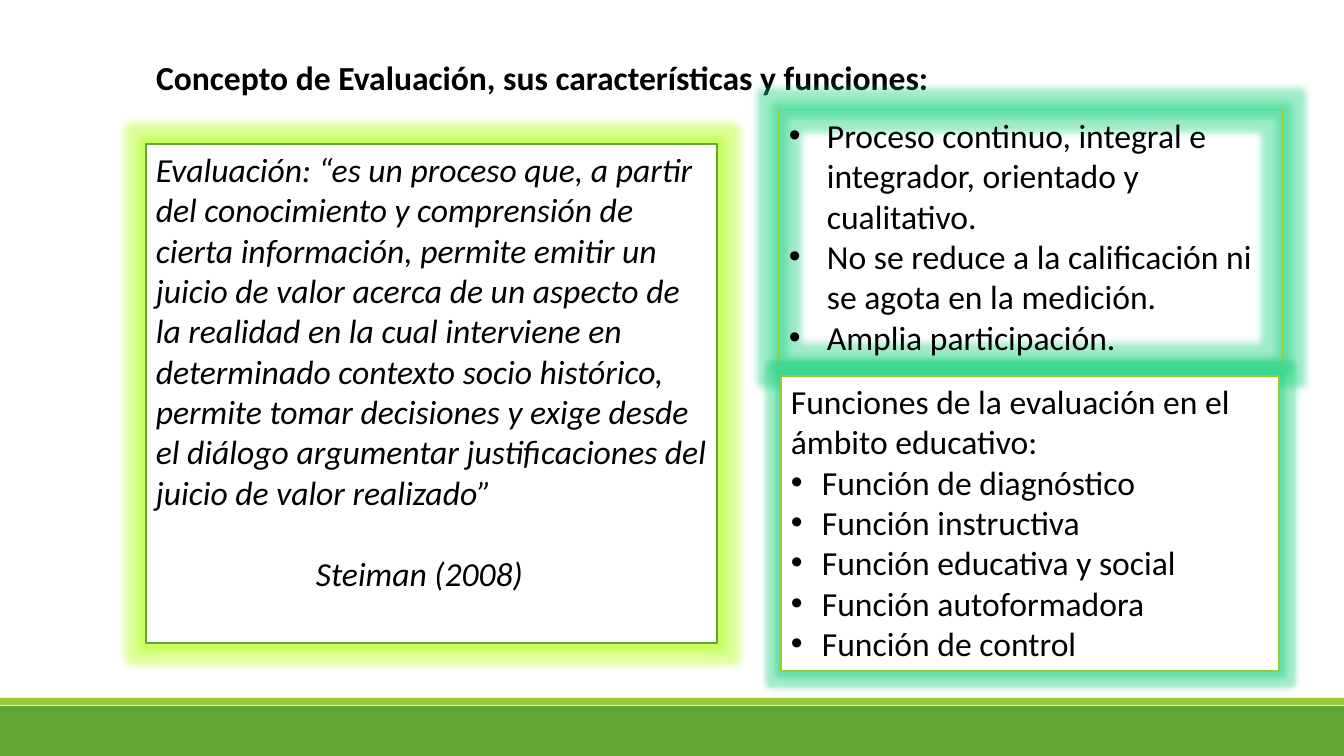
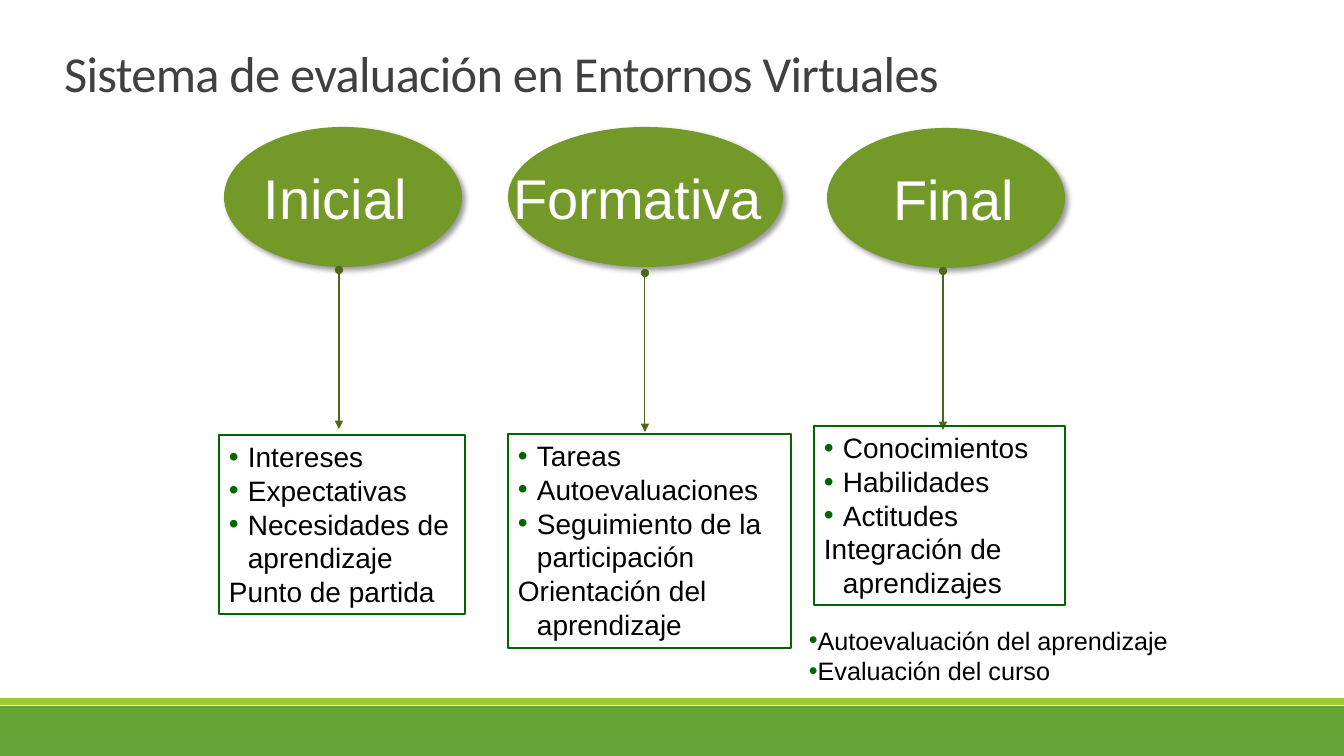
"""Build two slides on evaluation: its concept and its use in virtual settings."""
from collections import namedtuple

from lxml.etree import SubElement
from pptx import Presentation
from pptx.dml.color import RGBColor
from pptx.enum.shapes import MSO_CONNECTOR as Link, MSO_SHAPE as Preset
from pptx.enum.text import MSO_ANCHOR as Anchor, MSO_AUTO_SIZE as AutoSize, PP_ALIGN as Align
from pptx.oxml.ns import qn
from pptx.util import Pt

WIDTH, HEIGHT = 1344, 756
EMU_PER_PX = 12192000 / WIDTH

WHITE = RGBColor(0xFF, 0xFF, 0xFF)
BLACK = RGBColor(0x00, 0x00, 0x00)
CHARCOAL = RGBColor(0x40, 0x40, 0x40)
GREEN = RGBColor(0x63, 0xA5, 0x37)
LIME = RGBColor(0x99, 0xCB, 0x38)
OLIVE = RGBColor(0x73, 0x9A, 0x28)
DARK_OLIVE = RGBColor(0x4D, 0x67, 0x1B)
FOREST = RGBColor(0x00, 0x66, 0x00)
LIME_GLOW = RGBColor(0xA9, 0xFF, 0x04)
MINT_GLOW = RGBColor(0x0D, 0xD0, 0x77)

Style = namedtuple("Style", "font size color bold italic", defaults=(False, False))
CONCEPT_TITLE = Style("Calibri", 24, BLACK, bold=True)
SYSTEM_TITLE = Style("Calibri", 36, CHARCOAL)
QUOTE = Style("Calibri", 24, BLACK, italic=True)
BODY = Style("Calibri", 24, BLACK)
STAGE = Style("Arial", 40, WHITE)
DETAIL = Style("Arial", 20, BLACK)
REMARK = Style("Arial", 18, BLACK)

DEFINITION = (
    "Evaluación: “es un proceso que, a partir del conocimiento y comprensión de cierta "
    "información, permite emitir un juicio de valor acerca de un aspecto de la realidad en la "
    "cual interviene en determinado contexto socio histórico, permite tomar decisiones y exige "
    "desde el diálogo argumentar justificaciones del juicio de valor realizado”"
)
FEATURES = [
    "Proceso continuo, integral e integrador, orientado y cualitativo.",
    "No se reduce a la calificación ni se agota en la medición.",
    "Amplia participación.",
]
FUNCTIONS = [
    "Función de diagnóstico",
    "Función instructiva",
    "Función educativa y social",
    "Función autoformadora",
    "Función de control",
]
STAGES = [
    ("Inicial ", (224, 127, 238, 140), (339, 270), (219, 435, 246, 179),
     ["Intereses", "Expectativas", "Necesidades de aprendizaje"], "Punto de partida"),
    ("Formativa ", (508, 127, 275, 140), (645, 273), (508, 434, 283, 214),
     ["Tareas", "Autoevaluaciones", "Seguimiento de la participación"],
     "Orientación del aprendizaje"),
    (" Final", (827, 128, 238, 140), (943, 271), (814, 426, 251, 179),
     ["Conocimientos", "Habilidades", "Actitudes"], "Integración de aprendizajes"),
]
ARROW_LENGTH = 159
REMARKS = ["Autoevaluación del aprendizaje", "Evaluación del curso"]


def px(length):
    return round(length * EMU_PER_PX)


def add_child(parent, tag, **attributes):
    return SubElement(parent, qn(tag), {key: str(value) for key, value in attributes.items()})


def add_panel(slide, area, fill=None, line=None, line_width=1, preset=Preset.RECTANGLE):
    panel = slide.shapes.add_shape(preset, *map(px, area))
    panel.shadow.inherit = False
    if fill is None:
        panel.fill.background()
    else:
        panel.fill.solid()
        panel.fill.fore_color.rgb = fill
    if line is None:
        panel.line.fill.background()
    else:
        panel.line.color.rgb = line
        panel.line.width = Pt(line_width)
    panel.text_frame.vertical_anchor = Anchor.TOP
    panel.text_frame.word_wrap = True
    return panel


def add_effect(shape, tag, color, **attributes):
    effects = shape.element.spPr.find(qn("a:effectLst"))
    effect = add_child(effects, tag, **attributes)
    add_child(add_child(effect, "a:srgbClr", val=color), "a:alpha", val=40000)


def add_glow(shape, color, radius):
    add_effect(shape, "a:glow", color, rad=px(radius))


def add_run(paragraph, text, style):
    run = paragraph.add_run()
    run.text = text
    run.font.name = style.font
    run.font.size = Pt(style.size)
    run.font.color.rgb = style.color
    run.font.bold = style.bold
    run.font.italic = style.italic
    return run


def add_line(frame, text, style, align=Align.LEFT):
    paragraph = frame.paragraphs[0]
    if paragraph.runs:
        paragraph = frame.add_paragraph()
    paragraph.alignment = align
    add_run(paragraph, text, style)
    return paragraph


def set_indent(paragraph, left, first):
    properties = paragraph._p.get_or_add_pPr()
    properties.set("marL", str(px(left)))
    properties.set("indent", str(px(first)))
    return properties


def add_bullets(frame, items, style, hang, bullet_color=BLACK):
    for item in items:
        properties = set_indent(add_line(frame, item, style), hang, -hang)
        add_child(add_child(properties, "a:buClr"), "a:srgbClr", val=bullet_color)
        add_child(properties, "a:buFont", typeface="Arial")
        add_child(properties, "a:buChar", char="•")


def add_arrow(slide, x, top):
    arrow = slide.shapes.add_connector(
        Link.STRAIGHT, px(x), px(top), px(x), px(top + ARROW_LENGTH))
    arrow.line.color.rgb = DARK_OLIVE
    arrow.line.width = Pt(0.75)
    outline = arrow.element.spPr.find(qn("a:ln"))
    add_child(outline, "a:headEnd", type="oval")
    add_child(outline, "a:tailEnd", type="triangle")
    add_child(arrow.element.spPr, "a:effectLst")


def set_title(slide, text, area, style, anchor):
    title = slide.shapes.title
    title.left, title.top, title.width, title.height = map(px, area)
    frame = title.text_frame
    frame.auto_size = AutoSize.NONE
    frame.word_wrap = True
    frame.vertical_anchor = anchor
    return add_line(frame, text, style)


def add_bands(slide, layout):
    for area, color in [((0, 706, WIDTH, 50), GREEN), ((0, 698, WIDTH, 7), LIME)]:
        band = add_panel(slide, area, color)
        layout.shapes.element.append(band.element)


def build_concept(slide):
    set_title(slide, "Concepto de Evaluación, sus características y funciones:",
              (146, 52, 1089, 50), CONCEPT_TITLE, Anchor.TOP)

    definition = add_panel(slide, (146, 144, 571, 499), WHITE, GREEN, 1.25)
    add_glow(definition, LIME_GLOW, 15)
    add_line(definition.text_frame, DEFINITION, QUOTE)
    author = add_line(definition.text_frame, "Steiman (2008)", QUOTE)
    set_indent(author, 160, 0)
    author.space_before = Pt(29)

    features = add_panel(slide, (779, 110, 504, 254), None, LIME, 0.75)
    add_glow(features, MINT_GLOW, 15)
    add_bullets(features.text_frame, FEATURES, BODY, 38)

    functions = add_panel(slide, (781, 376, 498, 295), WHITE, LIME, 1.25)
    add_glow(functions, MINT_GLOW, 11)
    add_line(functions.text_frame, "Funciones de la evaluación en el ámbito educativo:", BODY)
    add_bullets(functions.text_frame, FUNCTIONS, BODY, 31)


def add_stage(slide, name, oval_area, arrow_start, box_area, items, summary):
    oval = add_panel(slide, oval_area, OLIVE, preset=Preset.OVAL)
    add_effect(oval, "a:outerShdw", BLACK, blurRad=Pt(4), dist=Pt(3), dir=45 * 60000)
    oval.text_frame.word_wrap = False
    oval.text_frame.vertical_anchor = Anchor.MIDDLE
    add_line(oval.text_frame, name, STAGE, Align.CENTER)

    add_arrow(slide, *arrow_start)

    box = add_panel(slide, box_area, None, FOREST)
    add_bullets(box.text_frame, items, DETAIL, 19, FOREST)
    set_indent(add_line(box.text_frame, summary, DETAIL), 19, -19)


def build_system(slide):
    heading = set_title(slide, "Sistema de evaluación en Entornos Virtuales",
                        (54, 31, 1109, 77), SYSTEM_TITLE, Anchor.BOTTOM)
    heading.line_spacing = 0.85
    heading.runs[0].font._element.set("spc", "-50")

    for stage in STAGES:
        add_stage(slide, *stage)

    remarks = add_panel(slide, (799, 620, 387, 72), WHITE)
    remarks.text_frame.word_wrap = False
    add_bullets(remarks.text_frame, REMARKS, REMARK, 0, FOREST)


def main():
    deck = Presentation()
    deck.slide_width, deck.slide_height = px(WIDTH), px(HEIGHT)
    layout = deck.slide_layouts[5]
    concept, system = [deck.slides.add_slide(layout) for _ in range(2)]
    add_bands(concept, layout)
    build_concept(concept)
    build_system(system)
    deck.save("out.pptx")


if __name__ == "__main__":
    main()
